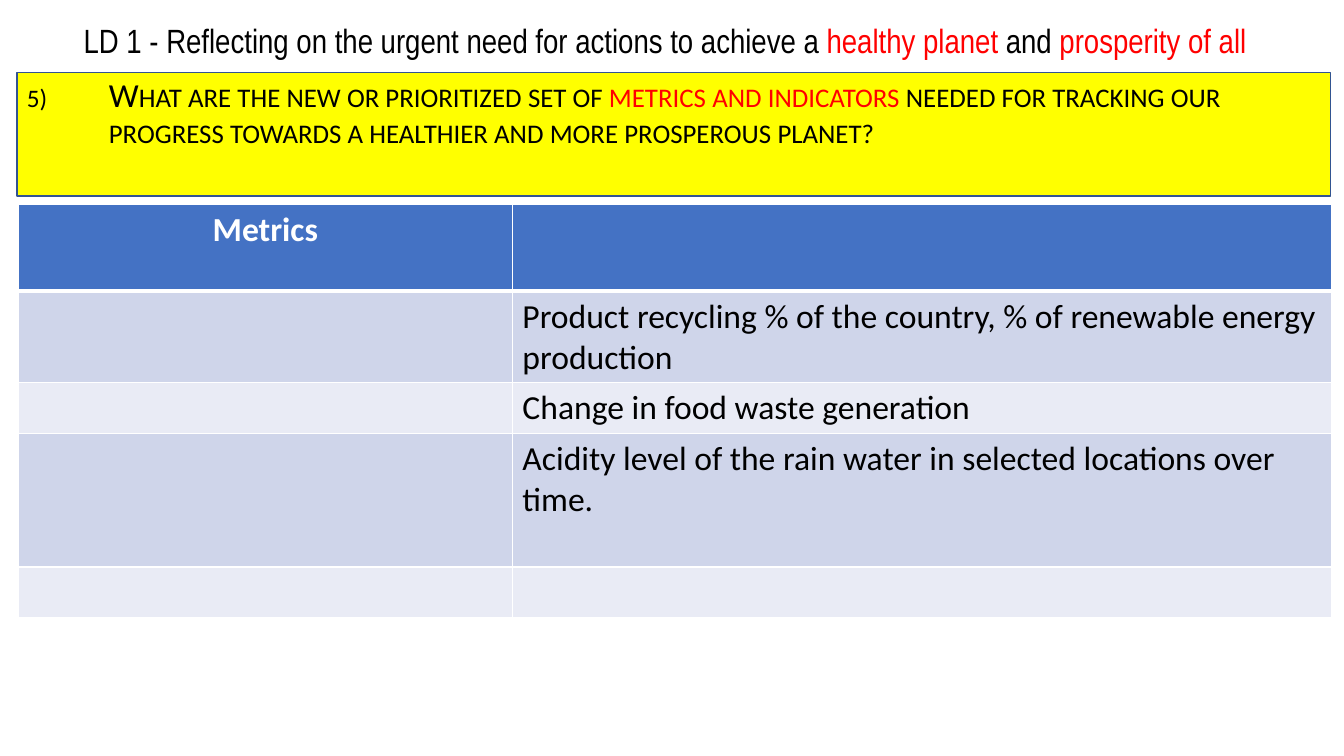
from dataclasses import dataclass

from lxml import etree
from pptx import Presentation
from pptx.dml import color
from pptx.enum import shapes, text
from pptx.oxml import ns
from pptx.util import Pt


@dataclass(frozen=True)
class Theme:
    body: str = "Calibri"
    head: str = "Arial Narrow"
    size: int = 24
    ink: str = "000000"
    red: str = "FF0000"
    white: str = "FFFFFF"
    panel: str = "FFFF00"
    edge: str = "325491"
    blue: str = "4472C4"
    bands: tuple = ("CFD5EA", "E9EBF5")


def rgb(code):
    return color.RGBColor.from_string(code)


def apply(target, **values):
    for name, value in values.items():
        setattr(target, name, value)


def add(parent, tag, **values):
    return etree.SubElement(parent, ns.qn(tag), values)


class Deck:
    def __init__(self, theme):
        self.theme = theme
        self.file = Presentation()
        apply(self.file, slide_width=Pt(960), slide_height=Pt(540))
        self.slide = self.file.slides.add_slide(self.file.slide_layouts[6])

    def panel(self, *box):
        shape = self.slide.shapes.add_shape(
            shapes.MSO_SHAPE.RECTANGLE, *map(Pt, box))
        shape.shadow.inherit = False
        shape.fill.solid()
        shape.fill.fore_color.rgb = rgb(self.theme.panel)
        shape.line.color.rgb = rgb(self.theme.edge)
        shape.line.width = Pt(1)

    def words(self, para, runs, face, small=False, bold=False):
        for part, tint in runs:
            run = para.add_run()
            run.text = part
            apply(run.font, name=face, size=Pt(self.theme.size), bold=bold)
            run.font.color.rgb = rgb(tint)
            if small:
                run._r.get_or_add_rPr().set("cap", "small")

    def label(self, box, runs, face, anchor, small=False, **style):
        frame = self.slide.shapes.add_textbox(*map(Pt, box)).text_frame
        apply(frame, word_wrap=True, vertical_anchor=anchor)
        para = frame.paragraphs[0]
        apply(para, line_spacing=0.9, **style)
        self.words(para, runs, face, small)
        return para

    def number(self, para, start, indent):
        props = para._p.get_or_add_pPr()
        props.set("marL", str(Pt(indent)))
        props.set("indent", str(-Pt(indent)))
        add(props, "a:buSzPct", val="75000")
        add(props, "a:buFont", typeface=self.theme.body)
        add(props, "a:buAutoNum", type="arabicParenR", startAt=str(start))

    def cell(self, cell, label, head, fill):
        props = cell._tc.get_or_add_tcPr()
        for side in "LRTB":
            width = Pt(3 if head and side == "B" else 1)
            line = add(props, f"a:ln{side}", w=str(width))
            add(add(line, "a:solidFill"), "a:srgbClr", val=self.theme.white)
        cell.fill.solid()
        cell.fill.fore_color.rgb = rgb(fill)
        if label:
            para = cell.text_frame.paragraphs[0]
            if head:
                para.alignment = text.PP_ALIGN.CENTER
            tint = self.theme.white if head else self.theme.ink
            self.words(para, [(label, tint)], self.theme.body, bold=head)

    def table(self, left, top, widths, heights, rows):
        box = map(Pt, (left, top, sum(widths), sum(heights)))
        grid = self.slide.shapes.add_table(len(rows), len(widths), *box).table
        for col, width in zip(grid.columns, widths):
            col.width = Pt(width)
        for i, (row, height) in enumerate(zip(grid.rows, heights)):
            row.height = Pt(height)
            fill = self.theme.bands[(i - 1) % 2] if i else self.theme.blue
            for cell, label in zip(row.cells, rows[i]):
                self.cell(cell, label, i == 0, fill)


def main():
    theme = Theme()
    deck = Deck(theme)
    deck.panel(12.2, 52, 938, 88)
    ask = deck.label(
        (12.2, 52.5, 938, 384),
        [("What are the new or prioritized set of ", theme.ink),
         ("metrics and indicators ", theme.red),
         ("needed for tracking our progress towards a healthier and more "
          "prosperous planet?", theme.ink)],
        theme.body, text.MSO_ANCHOR.TOP, small=True, space_before=Pt(10))
    deck.number(ask, 5, 58.5)
    deck.label(
        (0, 0, 950, 61),
        [("LD 1 - Reflecting on the urgent need for actions to achieve a ",
          theme.ink),
         ("healthy planet", theme.red),
         (" and ", theme.ink),
         ("prosperity of all", theme.red)],
        theme.head, text.MSO_ANCHOR.MIDDLE, alignment=text.PP_ALIGN.CENTER)
    deck.table(13, 146, (353, 585), (62, 65, 36.5, 95.5, 36), [
        ("Metrics", ""),
        ("", "Product recycling % of the country, % of renewable energy "
             "production"),
        ("", "Change in food waste generation"),
        ("", "Acidity level of the rain water in selected locations over "
             "time."),
        ("", ""),
    ])
    deck.file.save("out.pptx")


if __name__ == "__main__":
    main()
